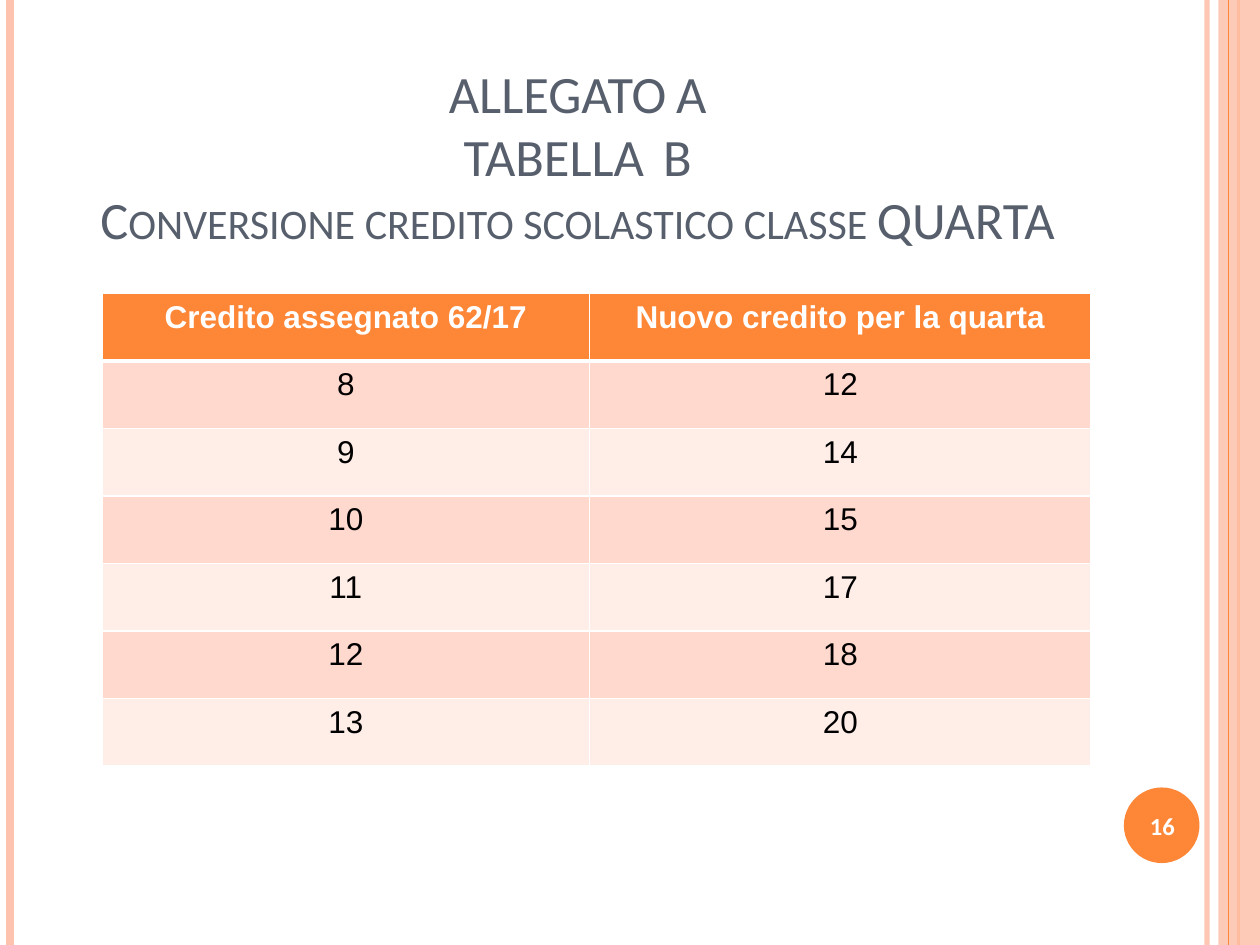
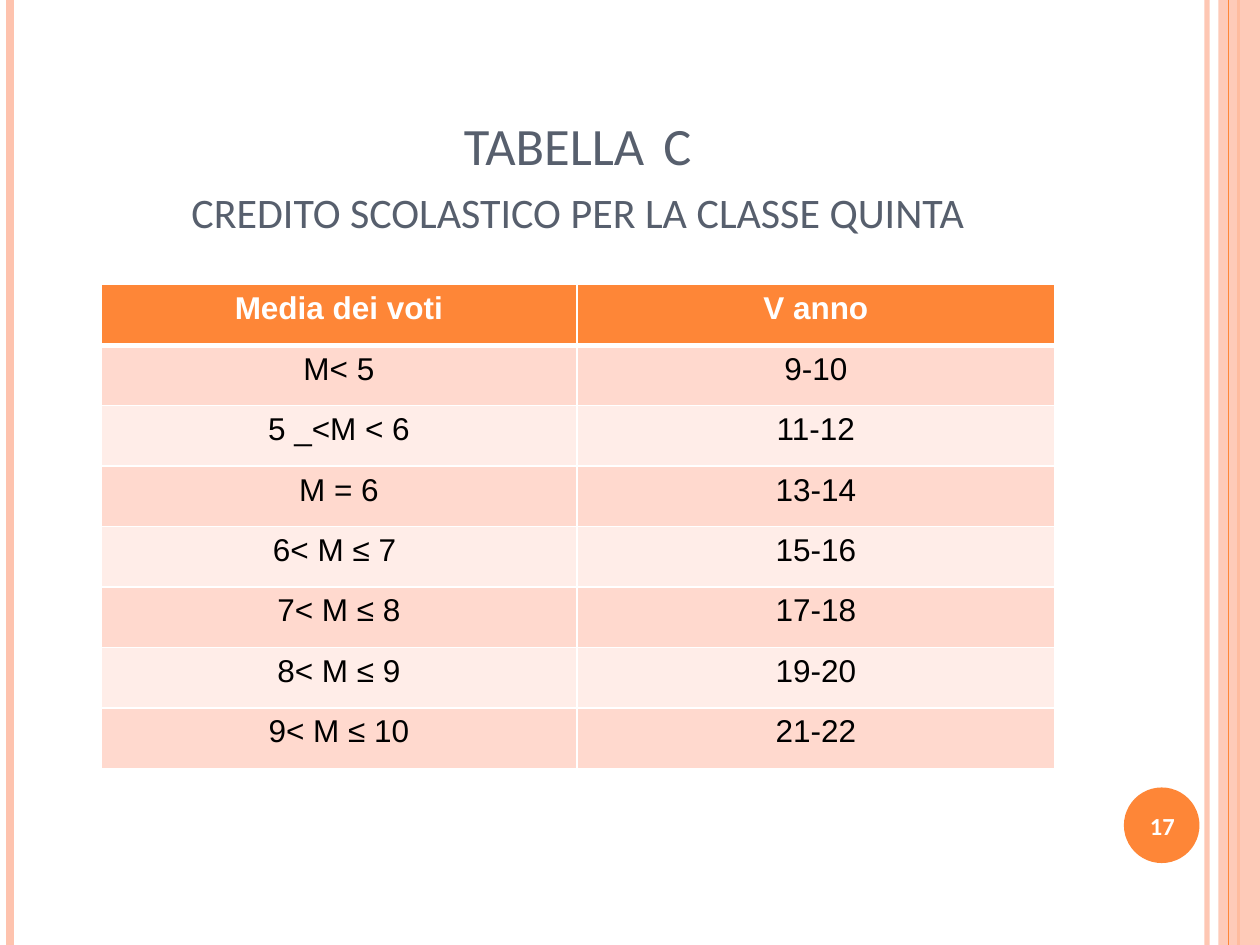
from lxml import etree
from pptx import Presentation
from pptx.dml.color import RGBColor
from pptx.enum.shapes import MSO_CONNECTOR, MSO_SHAPE
from pptx.enum.text import MSO_ANCHOR, PP_ALIGN
from pptx.oxml.ns import qn
from pptx.util import Inches, Pt

STRAIGHT = MSO_CONNECTOR.STRAIGHT
RECTANGLE, OVAL = MSO_SHAPE.RECTANGLE, MSO_SHAPE.OVAL
CENTER = PP_ALIGN.CENTER
MIDDLE, BOTTOM = MSO_ANCHOR.MIDDLE, MSO_ANCHOR.BOTTOM

ORANGE = RGBColor(0xFE, 0x86, 0x37)
PEACH = RGBColor(0xFE, 0xC3, 0xAE)
SLATE = RGBColor(0x57, 0x5F, 0x6D)
WHITE = RGBColor(0xFF, 0xFF, 0xFF)
BLACK = RGBColor(0x00, 0x00, 0x00)
ROW_TINTS = (RGBColor(0xFF, 0xD9, 0xCE), RGBColor(0xFF, 0xED, 0xE8))

SLIDE_W, SLIDE_H = 10, 7.5
TITLE_LEFT, TITLE_TOP, TITLE_W = 0.5, 0.3, 8.17
SIDE_BAND = (9.67, 0, SLIDE_W - 9.67, SLIDE_H)
BADGE = (8.92, 6.25, 0.6, 0.6)
NUMBER_BOX = (8.89, 6.27, 0.67, 0.57)

# x, colour, width in points, opacity in percent
RULES_UNDER_BAND = [(9.58, PEACH, 3, 93), (0.08, PEACH, 4.5, 100), (9.83, ORANGE, 1.5, 100)]
RULES_OVER_BAND = [(9.75, ORANGE, 0.75, 100)]

TITLE_FONT = {"name": "Calibri", "size": Pt(30), "bold": False}
NUMBER_FONT = {"name": "Calibri", "size": Pt(14), "bold": True}
HEADER_FONT = {"name": "Arial", "size": Pt(18), "bold": True}
BODY_FONT = {"name": "Arial", "size": Pt(18), "bold": False}

PAGES = [
    {
        "number": 16,
        "title": ["ALLEGATO A", "TABELLA  B", "Conversione credito scolastico classe QUARTA"],
        "title_height": 1.73,
        "table_at": (0.81, 2.33),
        "columns": (3.87, 3.98),
        "table_height": 3.75,
        "rows": [
            ("Credito assegnato 62/17", "Nuovo credito per la quarta"),
            ("8", "12"),
            ("9", "14"),
            ("10", "15"),
            ("11", "17"),
            ("12", "18"),
            ("13", "20"),
        ],
    },
    {
        "number": 17,
        "title": ["TABELLA  C", "credito scolastico per la classe quinta"],
        "title_height": 1.65,
        "table_at": (0.8, 2.26),
        "columns": (3.78, 3.79),
        "table_height": 3.84,
        "rows": [
            ("Media dei voti", "V anno"),
            ("M< 5", "9-10"),
            ("5 _<M < 6", "11-12"),
            ("M = 6", "13-14"),
            ("6< M ≤ 7 ", "15-16"),
            ("7< M ≤ 8", "17-18"),
            ("8< M ≤ 9", "19-20"),
            ("9< M ≤ 10", "21-22"),
        ],
    },
]


def inches(values):
    return [Inches(value) for value in values]


def set_opacity(shape, percent):
    for color in shape._element.spPr.iter(qn("a:srgbClr")):
        etree.SubElement(color, qn("a:alpha")).set("val", str(percent * 1000))


def write(frame, text, font, color):
    """Fill a text frame with one centred paragraph; a vertical tab breaks the line."""
    para = frame.paragraphs[0]
    para.text = text
    para.alignment = CENTER
    for span in para.runs:
        for name, value in font.items():
            setattr(span.font, name, value)
        span.font.color.rgb = color
    return para


def add_text(page, at, text, font, color, anchor):
    frame = page.shapes.add_textbox(*inches(at)).text_frame
    frame.word_wrap = True
    frame.vertical_anchor = anchor
    return write(frame, text, font, color)


def add_rule(page, x, color, width, opacity):
    rule = page.shapes.add_connector(STRAIGHT, *inches((x, 0, x, SLIDE_H)))
    rule.line.color.rgb = color
    rule.line.width = Pt(width)
    etree.SubElement(rule._element.spPr, qn("a:effectLst"))
    if opacity < 100:
        set_opacity(rule, opacity)


def add_solid(page, kind, at, color):
    solid = page.shapes.add_shape(kind, *inches(at))
    solid.shadow.inherit = False
    solid.fill.solid()
    solid.fill.fore_color.rgb = color
    solid.line.fill.background()
    return solid


def add_decoration(page):
    for rule in RULES_UNDER_BAND:
        add_rule(page, *rule)
    set_opacity(add_solid(page, RECTANGLE, SIDE_BAND, PEACH), 87)
    for rule in RULES_OVER_BAND:
        add_rule(page, *rule)
    add_solid(page, OVAL, BADGE, ORANGE)


def add_title(page, lines, height):
    at = (TITLE_LEFT, TITLE_TOP, TITLE_W, height)
    para = add_text(page, at, "\v".join(lines), TITLE_FONT, SLATE, BOTTOM)
    for span in para.runs:
        span._r.get_or_add_rPr().set("cap", "small")
    for line_break in para._p.findall(qn("a:br")):
        etree.SubElement(line_break, qn("a:rPr")).set("sz", "3000")


def set_borders(cell, row):
    """White borders, thicker between the header and the first body row."""
    widths = {"L": 1, "R": 1, "T": 3 if row == 1 else 1, "B": 3 if row == 0 else 1}
    properties = cell._tc.get_or_add_tcPr()
    for side, width in widths.items():
        border = etree.SubElement(properties, qn(f"a:ln{side}"), w=str(Pt(width)))
        fill = etree.SubElement(border, qn("a:solidFill"))
        etree.SubElement(fill, qn("a:srgbClr"), val=str(WHITE))


def add_credit_table(page, at, columns, height, rows):
    size = (sum(columns), height)
    frame = page.shapes.add_table(len(rows), len(columns), *inches(at + size))
    table = frame.table
    table.first_row = table.horz_banding = False
    for column, width in zip(table.columns, columns):
        column.width = Inches(width)
    for r, values in enumerate(rows):
        table.rows[r].height = Inches(height / len(rows))
        header = r == 0
        for c, value in enumerate(values):
            cell = table.cell(r, c)
            set_borders(cell, r)
            cell.fill.solid()
            cell.fill.fore_color.rgb = ORANGE if header else ROW_TINTS[(r - 1) % 2]
            write(cell.text_frame, value, HEADER_FONT if header else BODY_FONT,
                  WHITE if header else BLACK)


def main():
    deck = Presentation()
    deck.slide_width, deck.slide_height = inches((SLIDE_W, SLIDE_H))
    blank = deck.slide_layouts[6]
    for content in PAGES:
        page = deck.slides.add_slide(blank)
        add_decoration(page)
        add_title(page, content["title"], content["title_height"])
        add_credit_table(page, content["table_at"], content["columns"],
                         content["table_height"], content["rows"])
        add_text(page, NUMBER_BOX, str(content["number"]), NUMBER_FONT, WHITE, MIDDLE)
    deck.save("out.pptx")


if __name__ == "__main__":
    main()
